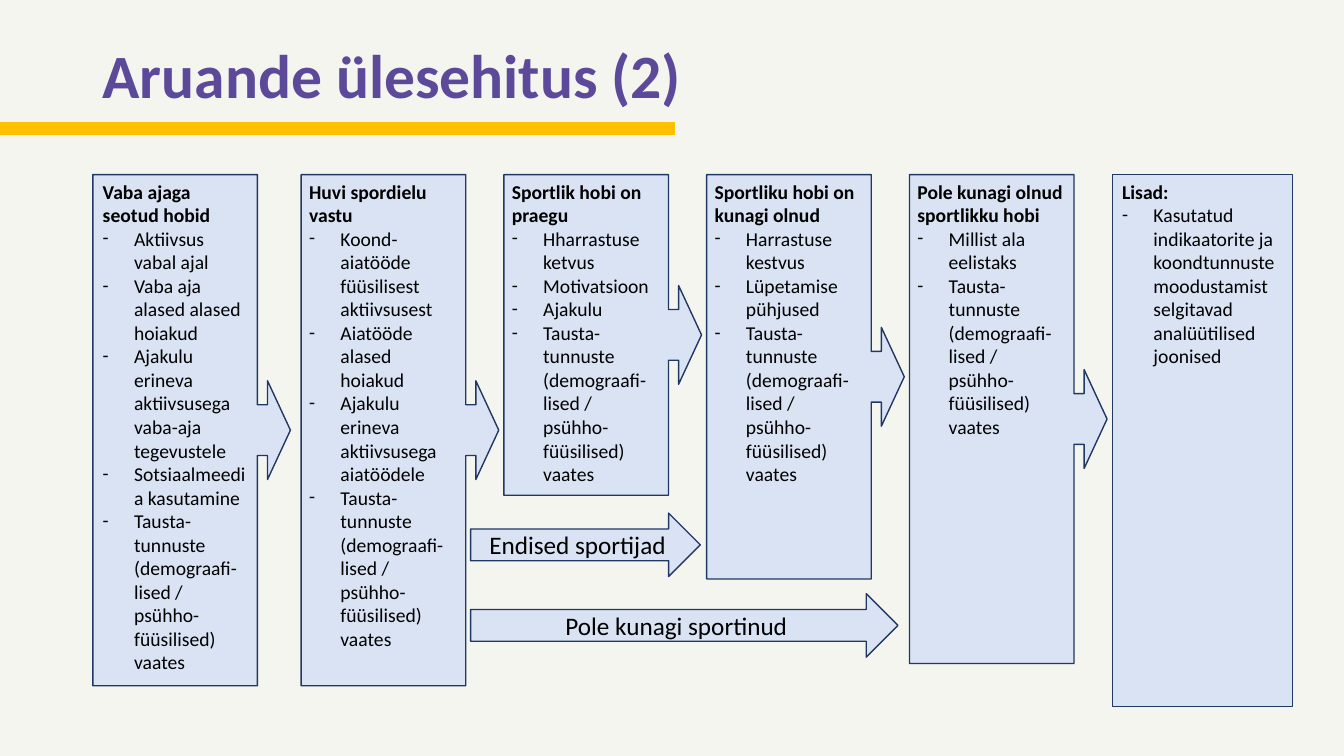
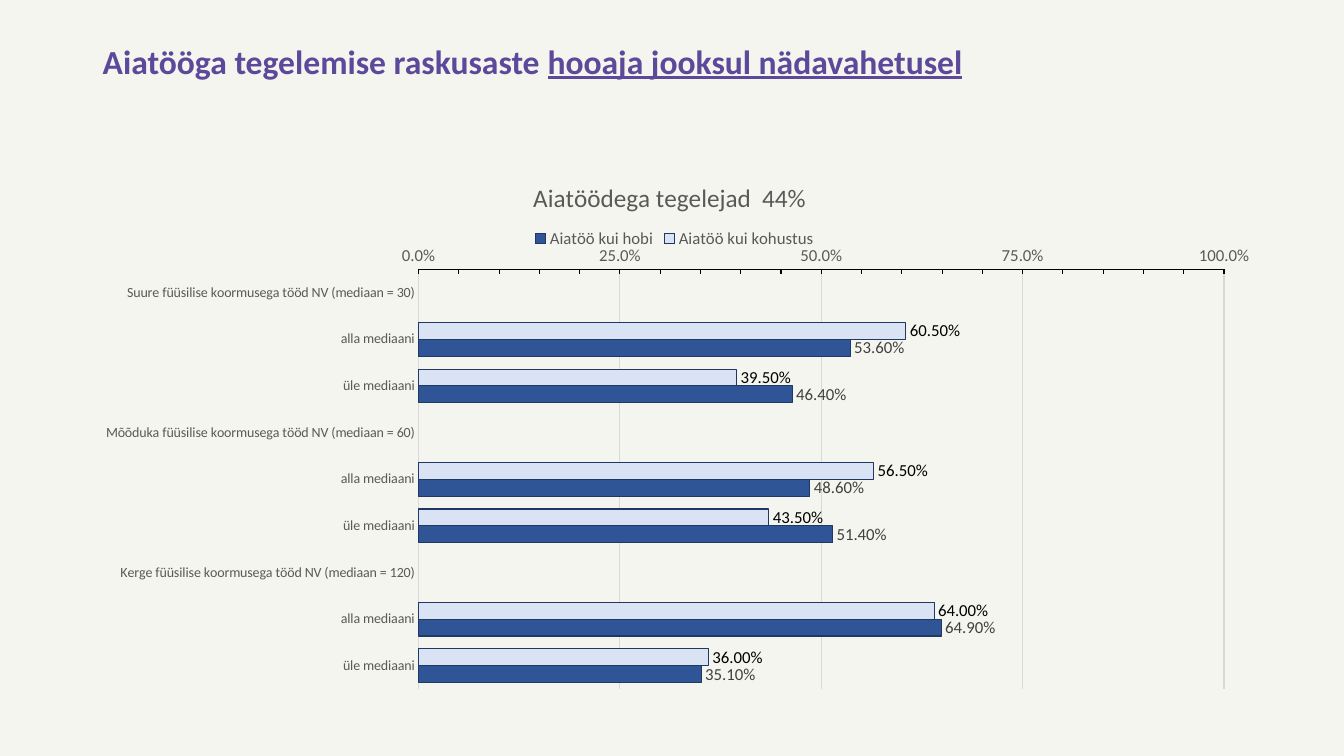
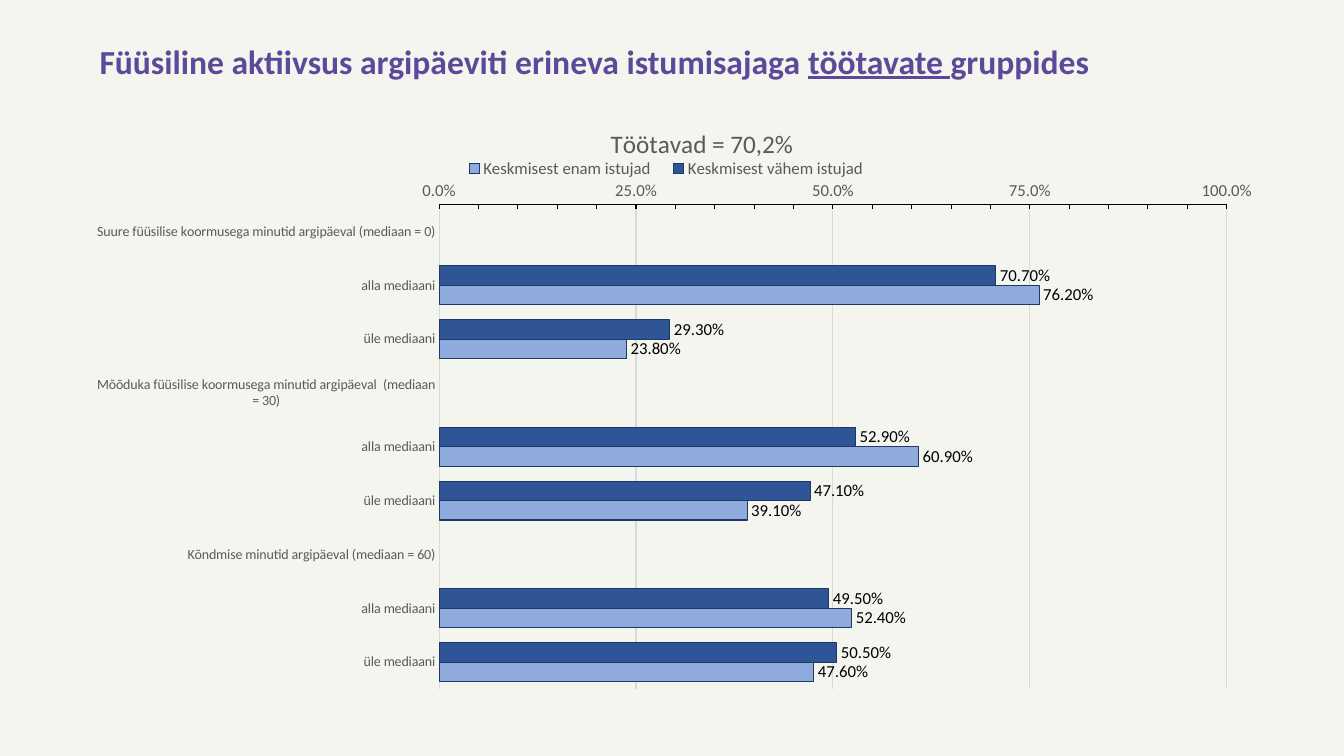
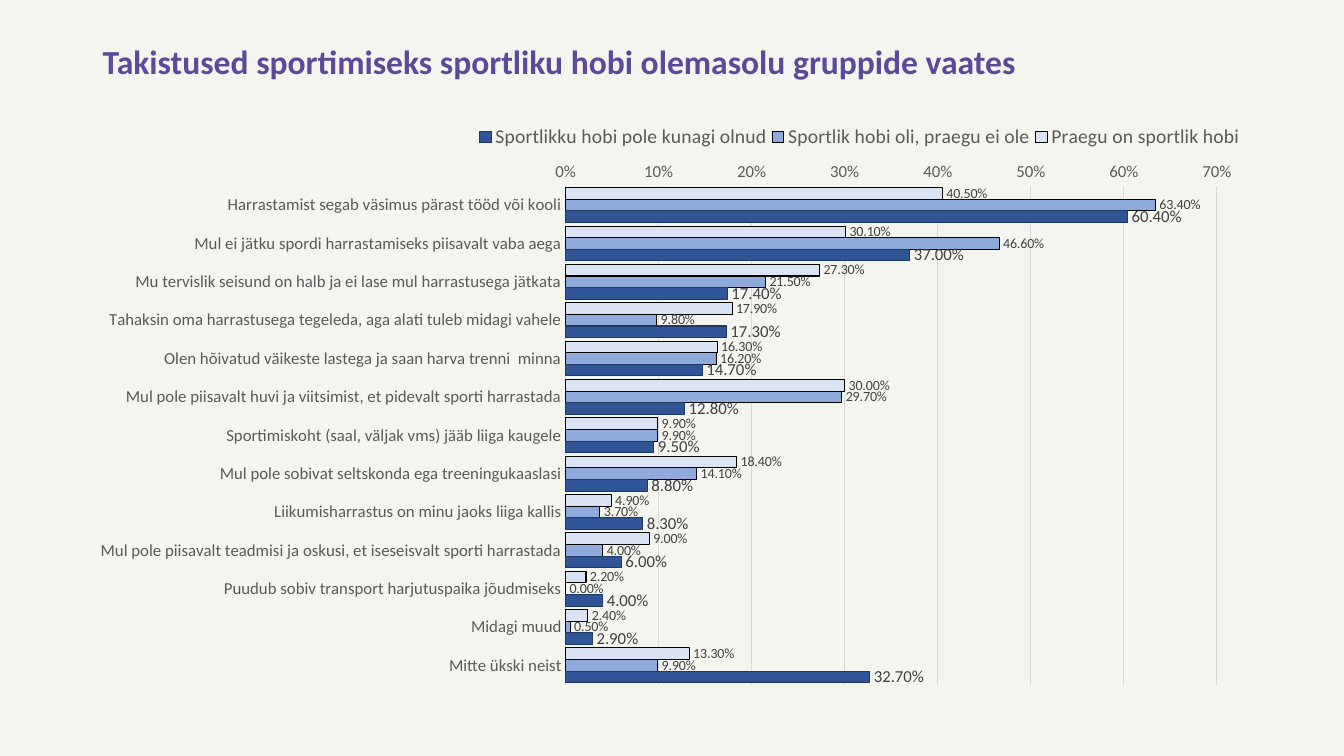
from lxml import etree
from pptx import Presentation
from pptx import util as u
from pptx.chart import data as chart_data
from pptx.dml import color
from pptx.enum import chart as ce
from pptx.enum import shapes, text
from pptx.oxml import ns

FONT = "Calibri"
COLORS = {
    "page": "F5F5EF", "title": "5C499A", "band": "FFC001", "ink": "000000",
    "pale": "DAE3F3", "mid": "8FAADC", "deep": "2F5597", "outline": "203864",
    "grey": "595959", "label": "404040", "grid": "D9D9D9",
}
BACKGROUND_TASK = "Tausta-tunnuste (demograafi-lised /  psühho-füüsilised) vaates"
TITLE_BOX = (2.34, 1.02, 29.21, 1.2)


def rgb(name):
    return color.RGBColor.from_string(COLORS[name])


def cm(box):
    return [u.Cm(length) for length in box]


def style_font(font, size, ink, bold=False):
    font.name, font.size, font.bold = FONT, u.Pt(size), bold
    font.color.rgb = rgb(ink)


def style_line(line, ink, width=0.75):
    line.color.rgb = rgb(ink)
    line.width = u.Pt(width)


def new_page(deck):
    return deck.slides.add_slide(deck.slide_layouts[6])


def add_title(page, parts, size=24, box=TITLE_BOX):
    """Parts starting with an underscore are underlined."""
    frame = page.shapes.add_textbox(*cm(box)).text_frame
    frame.word_wrap = True
    para = frame.paragraphs[0]
    para.line_spacing = 0.9
    style_font(para.font, size, "title", True)
    for part in parts:
        span = para.add_run()
        span.text = part.removeprefix("_")
        if part.startswith("_"):
            span.font.underline = True


def add_band(page, top, width):
    band = page.shapes.add_connector(
        shapes.MSO_CONNECTOR.STRAIGHT, *cm((0, top, width, top)))
    style_line(band.line, "band", 9.5)
    etree.SubElement(band._element.spPr, ns.qn("a:effectLst"))


def add_panel(page, kind, box, line_width=1):
    panel = page.shapes.add_shape(kind, *cm(box))
    panel.shadow.inherit = False
    panel.fill.solid()
    panel.fill.fore_color.rgb = rgb("pale")
    style_line(panel.line, "outline", line_width)
    panel.text_frame.word_wrap = True
    return panel


def add_dash(para):
    """Hang the paragraph behind a dash bullet."""
    props = para._p.get_or_add_pPr()
    props.set("marL", str(u.Cm(0.79)))
    props.set("indent", str(-u.Cm(0.79)))
    etree.SubElement(props, ns.qn("a:buFont")).set("typeface", FONT)
    etree.SubElement(props, ns.qn("a:buChar")).set("char", "-")


def fill_list(frame, heading, items):
    frame.vertical_anchor = text.MSO_ANCHOR.TOP
    for index, words in enumerate([heading, *items]):
        para = frame.add_paragraph() if index else frame.paragraphs[0]
        para.text = words
        para.alignment = text.PP_ALIGN.LEFT
        style_font(para.font, 14, "ink", bold=index == 0)
        if index:
            add_dash(para)


def add_callout(page, box, heading, items, inset=0.2):
    callout = add_panel(page, shapes.MSO_SHAPE.RIGHT_ARROW_CALLOUT, box)
    for index, value in enumerate((0.257, 0.25, 0.116, 0.833)):
        callout.adjustments[index] = value
    callout.text_frame.margin_left = u.Cm(inset)
    fill_list(callout.text_frame, heading, items)


def add_arrow(page, box, words):
    frame = add_panel(page, shapes.MSO_SHAPE.RIGHT_ARROW, box).text_frame
    frame.vertical_anchor = text.MSO_ANCHOR.MIDDLE
    para = frame.paragraphs[0]
    para.text = words
    para.alignment = text.PP_ALIGN.CENTER
    style_font(para.font, 18, "ink")


def add_structure(page, left, top):
    """Flow of report chapters: callouts, bypass arrows and the appendix."""
    step, width = 5.11, 4.98
    second = left + 5.25
    add_arrow(page, (left + 9.52, top + 8.53, 5.79, 1.6), "Endised sportijad")
    add_arrow(page, (left + 9.52, top + 10.56, 10.77, 1.6), "Pole kunagi sportinud")
    add_callout(page, (left, top, width, 12.88), "Vaba ajaga seotud hobid", [
        "Aktiivsus vabal ajal", "Vaba aja alased alased hoiakud",
        "Ajakulu erineva  aktiivsusega vaba-aja tegevustele",
        "Sotsiaalmeedia kasutamine", BACKGROUND_TASK], inset=0.25)
    chapters = [
        (12.88, "Huvi spordielu vastu", [
            "Koond-aiatööde füüsilisest aktiivsusest", "Aiatööde alased hoiakud",
            "Ajakulu erineva  aktiivsusega aiatöödele", BACKGROUND_TASK]),
        (8.08, "Sportlik hobi on praegu", [
            "Hharrastuse ketvus", "Motivatsioon", "Ajakulu", BACKGROUND_TASK]),
        (10.19, "Sportliku hobi on kunagi olnud", [
            "Harrastuse kestvus", "Lüpetamise pühjused", BACKGROUND_TASK]),
        (12.32, "Pole kunagi olnud sportlikku hobi", [
            "Millist ala eelistaks", BACKGROUND_TASK]),
    ]
    for index, (height, heading, items) in enumerate(chapters):
        add_callout(page, (second + index * step, top, width, height), heading, items)
    appendix = add_panel(page, shapes.MSO_SHAPE.RECTANGLE,
                         (second + len(chapters) * step, top, 4.55, 13.41), 0.75)
    fill_list(appendix.text_frame, "Lisad:", [
        "Kasutatud indikaatorite ja koondtunnuste moodustamist selgitavad "
        "analüütilised joonised"])


def set_layout(part, x, y, w=None, h=None, inner=False):
    """Place a chart part by fractions of the chart's size."""
    for old in part.findall(ns.qn("c:layout")):
        part.remove(old)
    layout = etree.Element(ns.qn("c:layout"))
    manual = etree.SubElement(layout, ns.qn("c:manualLayout"))
    settings = [("layoutTarget", "inner" if inner else None),
                ("xMode", "edge"), ("yMode", "edge"),
                ("x", x), ("y", y), ("w", w), ("h", h)]
    for tag, value in settings:
        if value is not None:
            etree.SubElement(manual, ns.qn("c:" + tag)).set("val", str(value))
    overlay = part.find(ns.qn("c:overlay"))
    if overlay is None:
        part.insert(0, layout)
    else:
        overlay.addprevious(layout)


def style_axes(chart, category_size, number_format, top_value, major, minor):
    names, values = chart.category_axis, chart.value_axis
    names.reverse_order = True
    style_line(names.format.line, "grid")
    for axis, size in ((names, category_size), (values, 12)):
        axis.major_tick_mark = axis.minor_tick_mark = ce.XL_TICK_MARK.NONE
        style_font(axis.tick_labels.font, size, "grey")
    values.tick_labels.number_format = number_format
    values.tick_labels.number_format_is_linked = False
    values.minimum_scale, values.maximum_scale = 0, top_value
    values.major_unit = major
    style_line(values.major_gridlines.format.line, "grid")
    if minor:
        values.minor_unit = minor
        values.minor_tick_mark = ce.XL_TICK_MARK.INSIDE
        style_line(values.format.line, "ink")
    else:
        values.format.line.fill.background()


def style_series(series, fill, outline, label_size, label_ink):
    series.format.fill.solid()
    series.format.fill.fore_color.rgb = rgb(fill)
    style_line(series.format.line, outline)
    labels = series.data_labels
    labels.show_value = True
    labels.position = ce.XL_LABEL_POSITION.OUTSIDE_END
    labels.number_format, labels.number_format_is_linked = "0.00%", False
    style_font(labels.font, label_size, label_ink)


def add_bar_chart(page, box, categories, series, plot_box, legend_box, gap,
                  title=None, title_at=None, legend_size=12, category_size=10,
                  number_format="0.0%", top_value=1, major=0.25, minor=0.05):
    """Each series is (name, percentages, fill, outline, label size, label ink)."""
    data = chart_data.CategoryChartData(number_format="0.00%")
    data.categories = categories
    for name, percentages, *_ in series:
        data.add_series(name, [None if p is None else round(p / 100, 3)
                               for p in percentages])
    chart = page.shapes.add_chart(ce.XL_CHART_TYPE.BAR_CLUSTERED, *cm(box), data).chart
    style_font(chart.font, 10, "ink")
    chart.has_title = title is not None
    if title:
        para = chart.chart_title.text_frame.paragraphs[0]
        para.text = title
        style_font(para.font, 18, "grey")
        set_layout(chart.chart_title._element, *title_at)
    chart.has_legend = True
    chart.legend.position = ce.XL_LEGEND_POSITION.TOP
    chart.legend.include_in_layout = False
    style_font(chart.legend.font, legend_size, "grey")
    set_layout(chart.legend._element, *legend_box)
    plot = chart.plots[0]
    plot.gap_width, plot.overlap, plot.vary_by_categories = gap, 0, False
    set_layout(chart._chartSpace.chart.plotArea, *plot_box, inner=True)
    style_axes(chart, category_size, number_format, top_value, major, minor)
    for drawn, (_, _, *style) in zip(plot.series, series):
        style_series(drawn, *style)


def median_groups(headings):
    return [name for heading in headings
            for name in (heading, "alla mediaani", "üle mediaani")]


def median_values(below):
    """Every group holds an empty heading row, the share below and the rest."""
    return [value for share in below for value in (None, share, 100 - share)]


def build_structure(deck):
    page = new_page(deck)
    add_title(page, ["Aruande ülesehitus (2)"], 44, (2.34, 1.02, 29.21, 3.68))
    add_structure(page, 2.34, 4.4)
    add_band(page, 3.23, 17.02)


def build_gardening(deck):
    page = new_page(deck)
    add_title(page, ["Aiatööga tegelemise raskusaste ", "_hooaja jooksul nädavahetusel"])
    add_bar_chart(
        page, (2.34, 3.76, 29.21, 14.76),
        median_groups(["Suure füüsilise koormusega tööd NV (mediaan = 30)",
                       "Mõõduka füüsilise koormusega tööd NV (mediaan = 60)",
                       "Kerge füüsilise koormusega tööd NV (mediaan = 120)"]),
        [("Aiatöö kui kohustus", median_values([60.5, 56.5, 64]),
          "pale", "outline", 12, "ink"),
         ("Aiatöö kui hobi", median_values([53.6, 48.6, 64.9]),
          "deep", "outline", 12, "label")],
        plot_box=(0.281, 0.205, 0.695, 0.717), legend_box=(0.377, 0.13, 0.25, 0.045),
        gap=77, title="Aiatöödega tegelejad  44%", title_at=(0.376, 0.045))


def build_sitting(deck):
    page = new_page(deck)
    add_title(page, ["Füüsiline aktiivsus argipäeviti erineva istumisajaga ",
                     "_töötavate ", "gruppides"], box=(2.26, *TITLE_BOX[1:]))
    add_bar_chart(
        page, (2.34, 2.84, 29.21, 14.76),
        median_groups(["Suure füüsilise koormusega minutid argipäeval (mediaan = 0)",
                       "Mõõduka füüsilise koormusega minutid argipäeval  (mediaan = 30)",
                       "Kõndmise minutid argipäeval (mediaan = 60)"]),
        [("Keskmisest vähem istujad", median_values([70.7, 52.9, 49.5]),
          "deep", "outline", 12, "ink"),
         ("Keskmisest enam istujad", median_values([76.2, 60.9, 52.4]),
          "mid", "outline", 12, "ink")],
        plot_box=(0.299, 0.157, 0.68, 0.827), legend_box=(0.31, 0.07, 0.37, 0.05),
        gap=77, title="Töötavad = 70,2%", title_at=(0.443, 0.015))


def build_obstacles(deck):
    page = new_page(deck)
    add_title(page, ["Takistused sportimiseks sportliku hobi olemasolu gruppide vaates"])
    add_bar_chart(
        page, (2.16, 2.72, 29.21, 14.68),
        ["Harrastamist segab väsimus pärast tööd või kooli",
         "Mul ei jätku spordi harrastamiseks piisavalt vaba aega",
         "Mu tervislik seisund on halb ja ei lase mul harrastusega jätkata",
         "Tahaksin oma harrastusega tegeleda, aga alati tuleb midagi vahele",
         "Olen hõivatud väikeste lastega ja saan harva trenni  minna",
         "Mul pole piisavalt huvi ja viitsimist, et pidevalt sporti harrastada",
         "Sportimiskoht (saal, väljak vms) jääb liiga kaugele",
         "Mul pole sobivat seltskonda ega treeningukaaslasi",
         "Liikumisharrastus on minu jaoks liiga kallis",
         "Mul pole piisavalt teadmisi ja oskusi, et iseseisvalt sporti harrastada",
         "Puudub sobiv transport harjutuspaika jõudmiseks",
         "Midagi muud", "Mitte ükski neist"],
        [("Praegu on sportlik hobi",
          [40.5, 30.1, 27.3, 17.9, 16.3, 30, 9.9, 18.4, 4.9, 9, 2.2, 2.4, 13.3],
          "pale", "ink", 10, "label"),
         ("Sportlik hobi oli, praegu ei ole",
          [63.4, 46.6, 21.5, 9.8, 16.2, 29.7, 9.9, 14.1, 3.7, 4, 0, 0.5, 9.9],
          "mid", "ink", 10, "label"),
         ("Sportlikku hobi pole kunagi olnud",
          [60.4, 37, 17.4, 17.3, 14.7, 12.8, 9.5, 8.8, 8.3, 6, 4, 2.9, 32.7],
          "deep", "outline", 12, "label")],
        plot_box=(0.414, 0.134, 0.562, 0.856), legend_box=(0.335, 0.025, 0.665, 0.05),
        gap=30, legend_size=14, category_size=12, number_format="0%",
        top_value=0.7, major=0.1, minor=None)


def main():
    deck = Presentation()
    deck.slide_width, deck.slide_height = u.Cm(33.87), u.Cm(19.05)
    backdrop = deck.slide_master.background.fill
    backdrop.solid()
    backdrop.fore_color.rgb = rgb("page")
    for build in (build_structure, build_gardening, build_sitting, build_obstacles):
        build(deck)
    deck.save("out.pptx")


if __name__ == "__main__":
    main()
